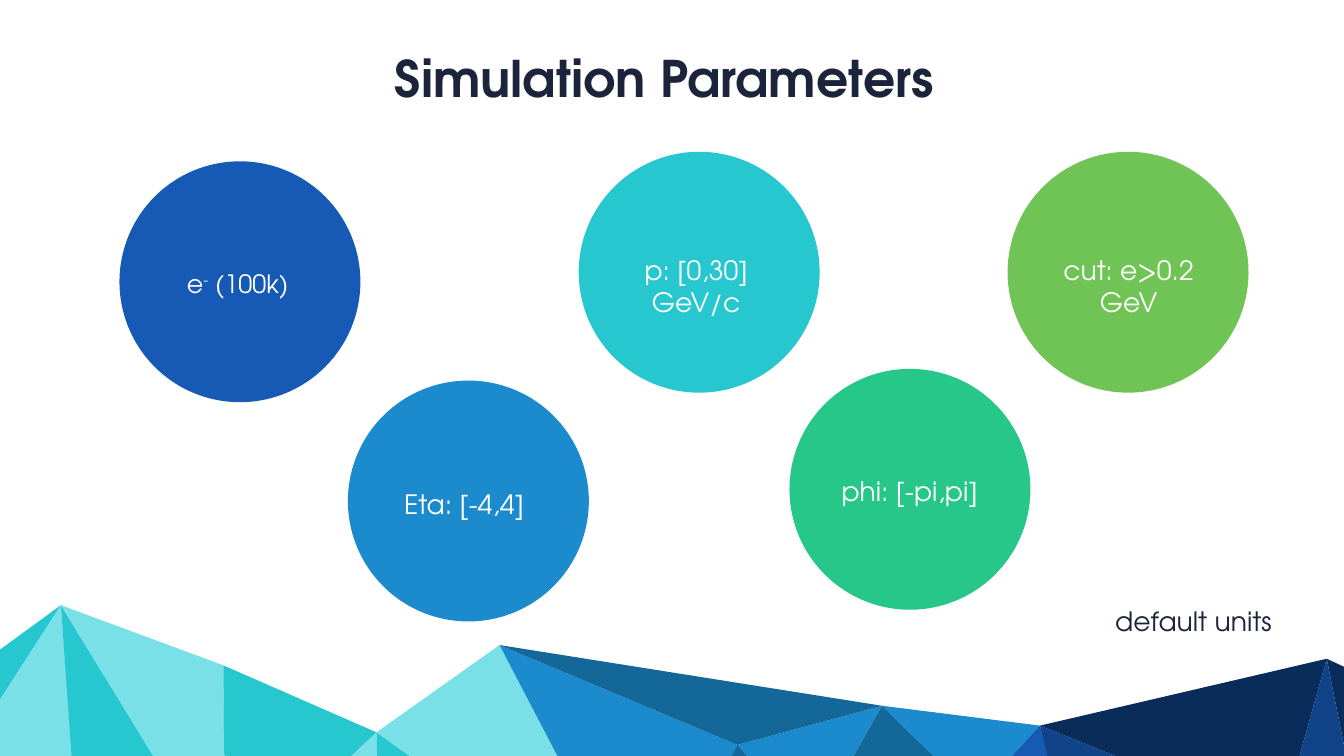
from pptx import Presentation
from pptx.dml.color import RGBColor
from pptx.enum.shapes import MSO_SHAPE
from pptx.enum.text import MSO_ANCHOR, MSO_AUTO_SIZE, PP_ALIGN
from pptx.util import Cm, Pt

OVAL = MSO_SHAPE.OVAL
TOP = MSO_ANCHOR.TOP
CENTER = PP_ALIGN.CENTER
GROW = MSO_AUTO_SIZE.SHAPE_TO_FIT_TEXT
TITLE_ONLY = 5

FONT = "TeX Gyre Adventor"
WHITE = RGBColor(0xFF, 0xFF, 0xFF)
INK = RGBColor(0x1B, 0x24, 0x3B)
TURQUOISE = RGBColor(0x27, 0xC7, 0xCF)
PALE = RGBColor(0x78, 0xE0, 0xE6)
SKY = RGBColor(0x1B, 0x8B, 0xCD)
STEEL = RGBColor(0x14, 0x68, 0x99)
ROYAL = RGBColor(0x16, 0x5A, 0xB6)
NAVY = RGBColor(0x0A, 0x2C, 0x5B)
DEEP = RGBColor(0x10, 0x43, 0x88)
EMERALD = RGBColor(0x27, 0xC7, 0x8A)
LEAF = RGBColor(0x70, 0xC4, 0x56)

# Mountain corners shared by several facets, in cm
BASE = 42.4
RIGHT = 68.1
PEAK_1 = (3.07, 30.5)
SHOULDER = (11.25, 33.53)
VALLEY_1 = (18.97, 36.91)
PEAK_2 = (25.17, 32.51)
FOLD_1 = (37.16, 37.54)
FOLD_2 = (40.89, 41.83)
RIDGE = (44.45, 35.57)
FOLD_3 = (49.12, 40.13)
VALLEY_2 = (52.4, 36.57)
FOLD_4 = (64.54, 41.45)
PEAK_3 = (66.85, 33.2)

FACETS = [
    (TURQUOISE, [PEAK_1, (0, 32.74), (0, 35.26)]),
    (PALE, [PEAK_1, (0, 35.26), (0, BASE), (3.99, BASE)]),
    (TURQUOISE, [PEAK_1, (3.91, BASE), (10.36, BASE)]),
    (PALE, [PEAK_1, (10.36, BASE), (11.35, BASE), SHOULDER]),
    (TURQUOISE, [SHOULDER, (11.35, BASE), (13.16, BASE), VALLEY_1]),
    (PALE, [VALLEY_1, (13.16, BASE), (19.18, BASE)]),
    (TURQUOISE, [VALLEY_1, (19.13, BASE), (26.72, BASE)]),
    (PALE, [VALLEY_1, (26.64, BASE), (30.33, BASE), PEAK_2]),
    (SKY, [PEAK_2, (30.33, BASE), (34.59, BASE), FOLD_1]),
    (SKY, [FOLD_1, FOLD_2, RIDGE]),
    (STEEL, [RIDGE, FOLD_2, FOLD_3]),
    (SKY, [RIDGE, FOLD_3, VALLEY_2]),
    (ROYAL, [VALLEY_2, FOLD_3, (51.51, BASE), (53.95, BASE)]),
    (NAVY, [VALLEY_2, FOLD_4, PEAK_3]),
    (DEEP, [VALLEY_2, (53.87, BASE), (62, BASE), FOLD_4]),
    (NAVY, [PEAK_3, (RIGHT, 39.47), (RIGHT, 33.78)]),
    (DEEP, [PEAK_3, FOLD_4, (66.04, BASE), (RIGHT, BASE), (RIGHT, 39.47)]),
    (STEEL, [PEAK_2, RIDGE, FOLD_1]),
    (STEEL, [FOLD_1, (34.52, BASE), (39.9, BASE), FOLD_2]),
]

DIAMETER = 12.14
SUPERSCRIPT = "30000"

# Circle fill, circle corner, label place (left, top, width), label size, label runs
PARAMETERS = [
    (ROYAL, (6.02, 8.13), (6.45, 13.26, 11.05), 36,
     [("e", None), ("-", SUPERSCRIPT), (" (100k)", None)]),
    (SKY, (17.53, 19.18), (18.77, 24.33, 9.22), 38, [("Eta: [-4,4]", None)]),
    (TURQUOISE, (29.16, 7.65), (30.02, 12.55, 10.11), 38, [("p: [0,30] GeV/c", None)]),
    (EMERALD, (39.78, 18.59), (41.35, 23.67, 8.97), 38, [("phi: [-pi,pi]", None)]),
    (LEAF, (50.77, 7.65), (51.56, 12.55, 10.62), 38, [("cut: e>0.2 GeV", None)]),
]


def paint(shape, color):
    shape.shadow.inherit = False
    shape.fill.solid()
    shape.fill.fore_color.rgb = color
    shape.line.fill.background()


def add_facet(slide, color, corners):
    points = [(Cm(x), Cm(y)) for x, y in corners]
    builder = slide.shapes.build_freeform(*points[0])
    builder.add_line_segments(points[1:], close=True)
    paint(builder.convert_to_shape(), color)


def add_circle(slide, color, corner):
    left, top = corner
    paint(slide.shapes.add_shape(OVAL, Cm(left), Cm(top), Cm(DIAMETER), Cm(DIAMETER)), color)


def format_text(shape, size, color, inset, bold=False):
    frame = shape.text_frame
    frame.word_wrap = True
    frame.auto_size = GROW
    frame.vertical_anchor = TOP
    frame.margin_left = frame.margin_right = Cm(inset)
    frame.margin_top = frame.margin_bottom = Cm(inset / 2)
    paragraph = frame.paragraphs[0]
    paragraph.alignment = CENTER
    paragraph.font.name = FONT
    paragraph.font.size = Pt(size)
    paragraph.font.bold = bold
    paragraph.font.color.rgb = color


def add_label(slide, place, size, color, runs):
    left, top, width = place
    box = slide.shapes.add_textbox(Cm(left), Cm(top), Cm(width), Cm(2.13))
    paragraph = box.text_frame.paragraphs[0]
    for text, baseline in runs:
        run = paragraph.add_run()
        run.text = text
        if baseline:
            run._r.get_or_add_rPr().set("baseline", baseline)
    format_text(box, size, color, inset=0.5)


def set_title(slide, text):
    title = slide.shapes.title
    title.left, title.top, title.width, title.height = Cm(8), Cm(2.24), Cm(50.95), Cm(3.33)
    title.text_frame.text = text
    format_text(title, 72, INK, inset=0.25, bold=True)


def main():
    presentation = Presentation()
    presentation.slide_width = Cm(67.72)
    presentation.slide_height = Cm(38.1)
    slide = presentation.slides.add_slide(presentation.slide_layouts[TITLE_ONLY])

    # Mountain range along the bottom
    for color, corners in FACETS:
        add_facet(slide, color, corners)

    # Parameter circles with their labels
    for color, corner, place, size, runs in PARAMETERS:
        add_circle(slide, color, corner)
        add_label(slide, place, size, WHITE, runs)

    # Title and remark
    set_title(slide, "Simulation Parameters")
    add_label(slide, (55.55, 30.25, 9.17), 38, INK, [("default units", None)])

    presentation.save("out.pptx")


if __name__ == "__main__":
    main()
